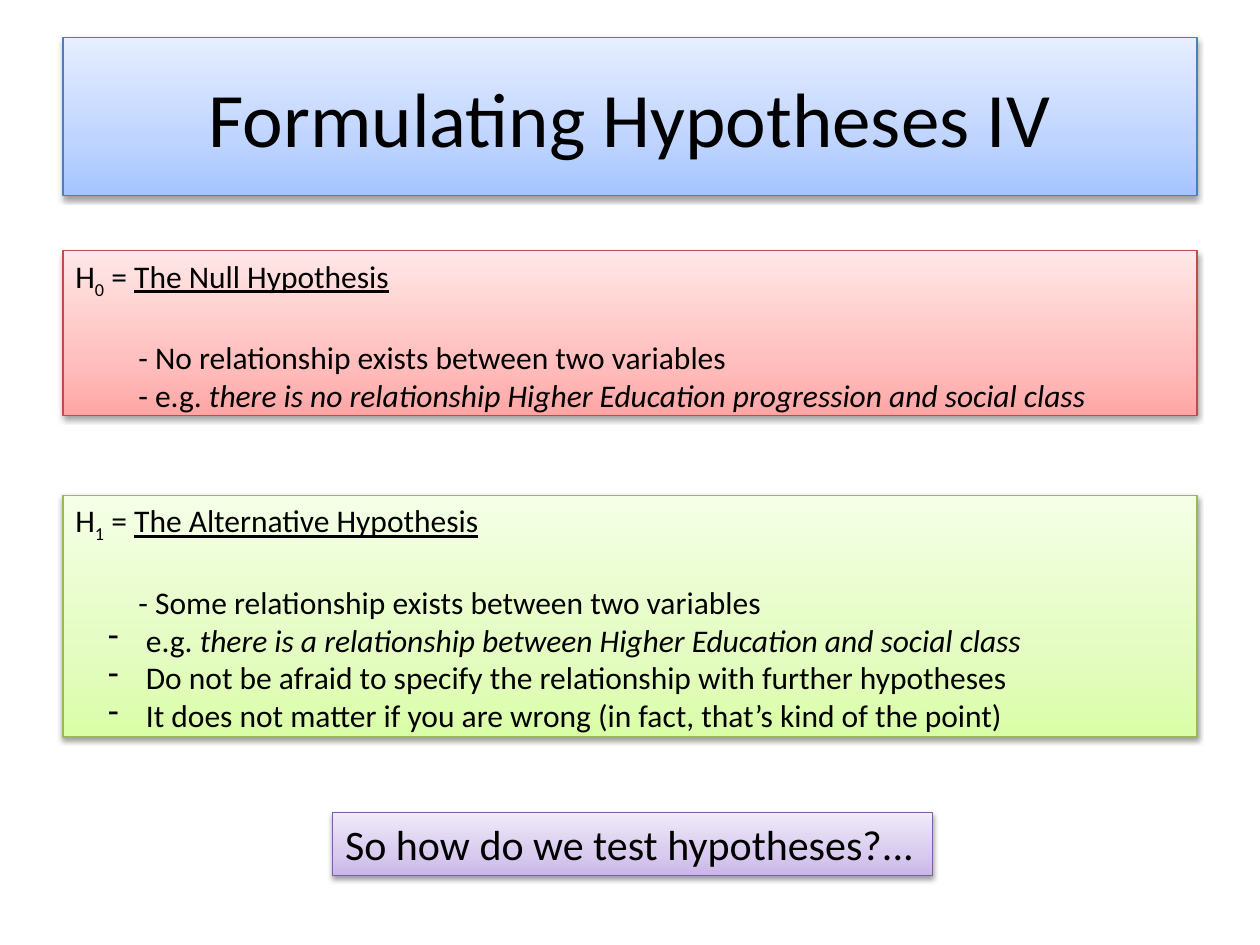
from copy import deepcopy
from pptx import Presentation
from pptx import oxml
from pptx.dml import color
from pptx.enum import text
from pptx.oxml import ns
from pptx.util import Inches, Pt

FONT = "Calibri"
LEFT, WIDTH = 0.5, 9


def paint(target, code):
    target.rgb = color.RGBColor.from_string(code)


def fade(shape, codes):
    shape.fill.gradient()
    shape.fill.gradient_angle = 90
    stops = shape._element.spPr.find(".//" + ns.qn("a:gsLst"))
    stops.insert(1, deepcopy(stops[0]))
    for stop, place, code in zip(shape.fill.gradient_stops, (0, 0.35, 1), codes):
        stop.position = place
        paint(stop.color, code)


def shade(shape):
    shape._element.spPr.append(oxml.parse_xml(
        f'<a:effectLst {ns.nsdecls("a")}>'
        '<a:outerShdw blurRad="40000" dist="20000" dir="5400000" rotWithShape="0">'
        '<a:srgbClr val="000000"><a:alpha val="38000"/></a:srgbClr>'
        '</a:outerShdw></a:effectLst>'))


def dress(shape, codes, edge):
    fade(shape, codes)
    paint(shape.line.color, edge)
    shape.line.width = Pt(0.75)
    shade(shape)


def style(run, size):
    run.font.name = FONT
    run.font.size = Pt(size)
    paint(run.font.color, "000000")


def write(para, words, size=18):
    run = para.add_run()
    run.text = words
    style(run, size)
    return run


def add_box(slide, place, codes, edge, wrap=True):
    box = slide.shapes.add_textbox(*map(Inches, place))
    dress(box, codes, edge)
    box.text_frame.word_wrap = wrap
    box.text_frame.auto_size = text.MSO_AUTO_SIZE.SHAPE_TO_FIT_TEXT
    return box.text_frame


def add_title(slide, words):
    title = slide.shapes.title
    title.left, title.top = Inches(LEFT), Inches(0.3)
    title.width, title.height = Inches(WIDTH), Inches(1.25)
    dress(title, ("A4C4FF", "BFD4FF", "E6EEFF"), "4B7EBC")
    frame = title.text_frame
    frame.vertical_anchor = text.MSO_ANCHOR.MIDDLE
    frame.text = words
    para = frame.paragraphs[0]
    para.alignment = text.PP_ALIGN.CENTER
    style(para.runs[0], 44)


def add_head(para, index, name):
    write(para, "H")
    write(para, index).font._element.set("baseline", "-25000")
    write(para, " = ")
    write(para, name).font.underline = True
    para.space_after = Pt(22)


def add_point(frame, words, slant, dash):
    para = frame.add_paragraph()
    para.level = 1
    props = para._p.get_or_add_pPr()
    props.set("marL", str(Inches(0.56 if dash else 0.5)))
    props.set("indent", str(Inches(-0.3 if dash else 0)))
    if dash:
        props.append(oxml.parse_xml(
            f'<a:buChar {ns.nsdecls("a")} char="-"/>'))
    write(para, words)
    if slant:
        write(para, slant).font.italic = True


def add_claim(slide, top, height, codes, edge, index, name, points):
    frame = add_box(slide, (LEFT, top, WIDTH, height), codes, edge)
    add_head(frame.paragraphs[0], index, name)
    for words, slant, dash in points:
        add_point(frame, words, slant, dash)


def main():
    deck = Presentation()
    deck.slide_width, deck.slide_height = Inches(10), Inches(7.5)
    slide = deck.slides.add_slide(deck.slide_layouts[5])
    add_title(slide, "Formulating Hypotheses IV")
    ask = add_box(slide, (2.64, 6.45, 4.76, 0.5),
                  ("C9B5E8", "D8CBEE", "F0EAF9"), "7D60A0", wrap=False)
    write(ask.paragraphs[0], "So how do we test hypotheses?...", 24)
    add_claim(
        slide, 1.99, 1.31, ("FFA6A5", "FFC0BF", "FFE7E7"), "BF4C48",
        "0", "The Null Hypothesis",
        [("- No relationship exists between two variables", "", False),
         ("- e.g. ", "there is no relationship Higher Education progression "
          "and social class", False)])
    add_claim(
        slide, 3.93, 1.92, ("DAFDA7", "E4FCC2", "F5FFE7"), "98B955",
        "1", "The Alternative Hypothesis",
        [("- Some relationship exists between two variables", "", False),
         ("e.g. ", "there is a relationship between Higher Education "
          "and social class", True),
         ("Do not be afraid to specify the relationship with further "
          "hypotheses", "", True),
         ("It does not matter if you are wrong (in fact, that’s kind of "
          "the point)", "", True)])
    deck.save("out.pptx")


if __name__ == "__main__":
    main()
